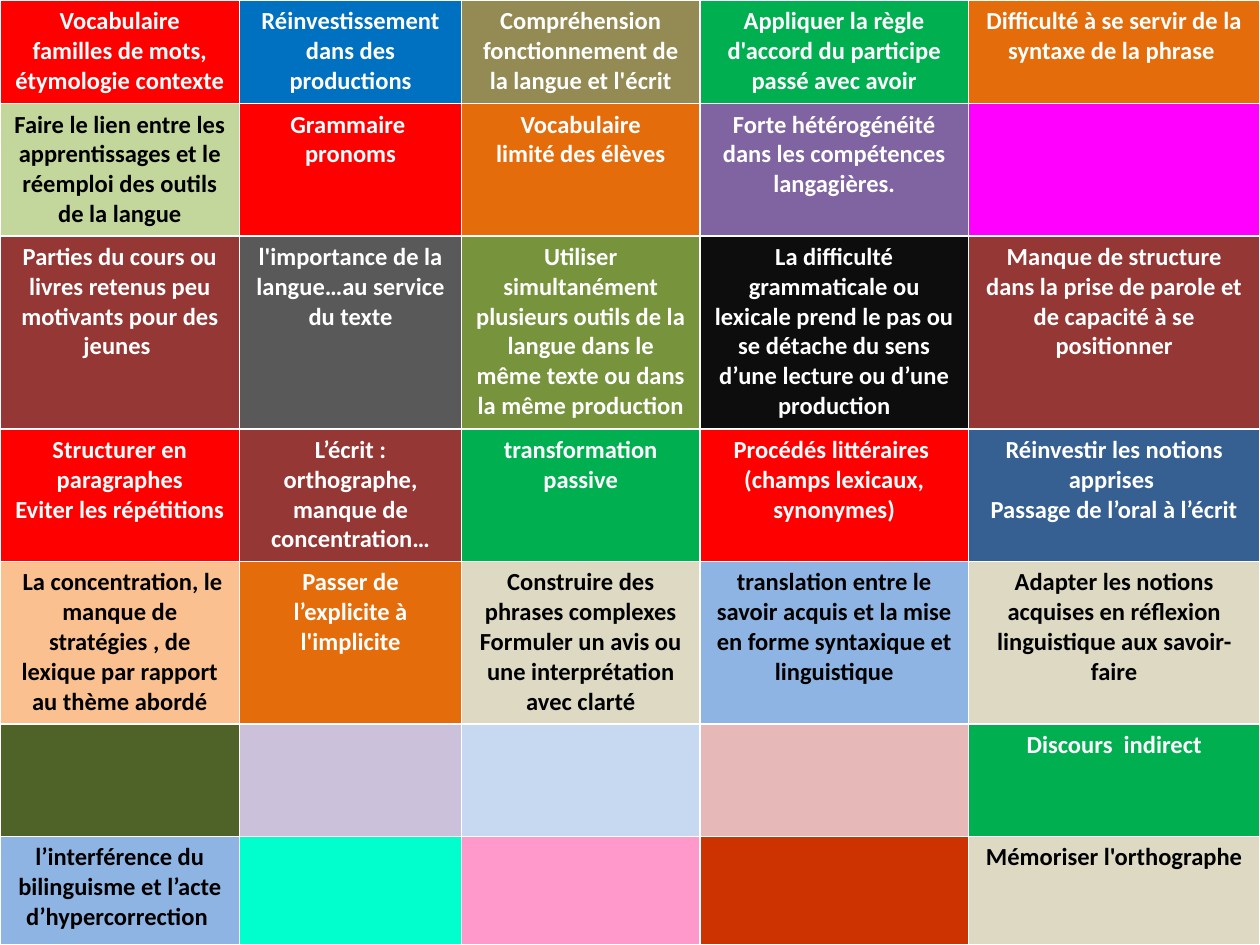
import dataclasses

import pptx
import pptx.dml.color
import pptx.enum.text
import pptx.util


@dataclasses.dataclass(frozen=True)
class Theme:
    font: str = "Calibri"
    size: int = 14
    light: str = "FFFFFF"
    dark: str = "000000"
    red: str = "FF0000"
    blue: str = "0070C0"
    khaki: str = "948A54"
    green: str = "00B050"
    orange: str = "E46C0A"
    lime: str = "C3D69B"
    purple: str = "8064A2"
    magenta: str = "FF00FF"
    brown: str = "953735"
    gray: str = "595959"
    olive: str = "77933C"
    black: str = "0D0D0D"
    navy: str = "376092"
    peach: str = "FAC090"
    sand: str = "DDD9C3"
    sky: str = "8EB4E3"
    moss: str = "4F6228"
    lilac: str = "CCC1DA"
    ice: str = "C6D9F1"
    rose: str = "E6B9B8"
    aqua: str = "00FFCC"
    pink: str = "FF99CC"
    rust: str = "CC3300"

    def ink(self, fill):
        """Text colour that reads well on a fill."""
        pale = (self.lime, self.peach, self.sand, self.sky)
        return self.dark if fill in pale else self.light


T = Theme()
COLS = [1.9, 1.76, 1.89, 2.13, 2.31]
ROWS = [0.82, 1.05, 1.53, 1.05, 1.29, 0.89, 0.86]
TOPICS = [
    [("Vocabulaire\nfamilles de mots, étymologie contexte", T.red),
     ("Réinvestissement dans des productions", T.blue),
     ("Compréhension fonctionnement de la langue et l'écrit", T.khaki),
     ("Appliquer la règle d'accord du participe passé avec avoir", T.green),
     ("Difficulté à se servir de la syntaxe de la phrase ", T.orange)],
    [("Faire le lien entre les apprentissages et le réemploi des outils de la langue", T.lime),
     ("Grammaire  pronoms", T.red),
     ("Vocabulaire\nlimité des élèves", T.orange),
     ("Forte hétérogénéité dans les compétences langagières.", T.purple),
     ("", T.magenta)],
    [("Parties du cours ou livres retenus peu motivants pour des jeunes ", T.brown),
     ("l'importance de la langue…au service du texte", T.gray),
     ("Utiliser simultanément plusieurs outils de la langue dans le "
      "même texte ou dans la même production", T.olive),
     ("La difficulté grammaticale ou lexicale prend le pas ou se détache "
      "du sens d’une lecture ou d’une production", T.black),
     ("Manque de structure dans la prise de parole et de capacité à se positionner", T.brown)],
    [("Structurer en paragraphes\nEviter les répétitions", T.red),
     ("L’écrit : orthographe,\nmanque de concentration…", T.brown),
     ("transformation passive", T.green),
     ("Procédés littéraires \n(champs lexicaux, synonymes)", T.red),
     ("Réinvestir les notions apprises \nPassage de l’oral à l’écrit", T.navy)],
    [(" La concentration, le manque de stratégies , de lexique par rapport "
      "au thème abordé", T.peach),
     ("Passer de l’explicite à l'implicite", T.orange),
     ("Construire des phrases complexes\n"
      "Formuler un avis ou une interprétation avec clarté", T.sand),
     ("translation entre le savoir acquis et la mise en forme syntaxique et linguistique", T.sky),
     ("Adapter les notions acquises en réflexion linguistique aux savoir-faire", T.sand)],
    [("", T.moss), ("", T.lilac), ("", T.ice), ("", T.rose),
     ("Discours  indirect", T.green)],
    [("l’interférence du bilinguisme et l’acte d’hypercorrection ", T.sky),
     ("", T.aqua), ("", T.pink), ("", T.rust),
     ("Mémoriser l'orthographe", T.sand)],
]


def rgb(code):
    return pptx.dml.color.RGBColor.from_string(code)


def split(total, parts):
    """Share a length out in proportion to the parts."""
    return [round(total * part / sum(parts)) for part in parts]


def fill_cell(cell, text, fill):
    cell.fill.solid()
    cell.fill.fore_color.rgb = rgb(fill)
    cell.text_frame.text = text
    for para in cell.text_frame.paragraphs:
        para.alignment = pptx.enum.text.PP_ALIGN.CENTER
        for run in para.runs:
            run.font.name = T.font
            run.font.size = pptx.util.Pt(T.size)
            run.font.bold = True
            run.font.color.rgb = rgb(T.ink(fill))


def add_grid(slide, left, top, width, height):
    """Topic table; its table style gives the white rules."""
    frame = slide.shapes.add_table(len(ROWS), len(COLS), left, top, width, height)
    table = frame.table
    for col, size in zip(table.columns, split(width, COLS)):
        col.width = size
    for row, size, topics in zip(table.rows, split(height, ROWS), TOPICS):
        row.height = size
        for cell, (text, fill) in zip(row.cells, topics):
            fill_cell(cell, text, fill)


def main():
    deck = pptx.Presentation()
    deck.slide_width = pptx.util.Inches(10)
    deck.slide_height = pptx.util.Inches(7.5)
    slide = deck.slides.add_slide(deck.slide_layouts[6])
    add_grid(slide, 0, 0, deck.slide_width, deck.slide_height)
    deck.save("out.pptx")


if __name__ == "__main__":
    main()
